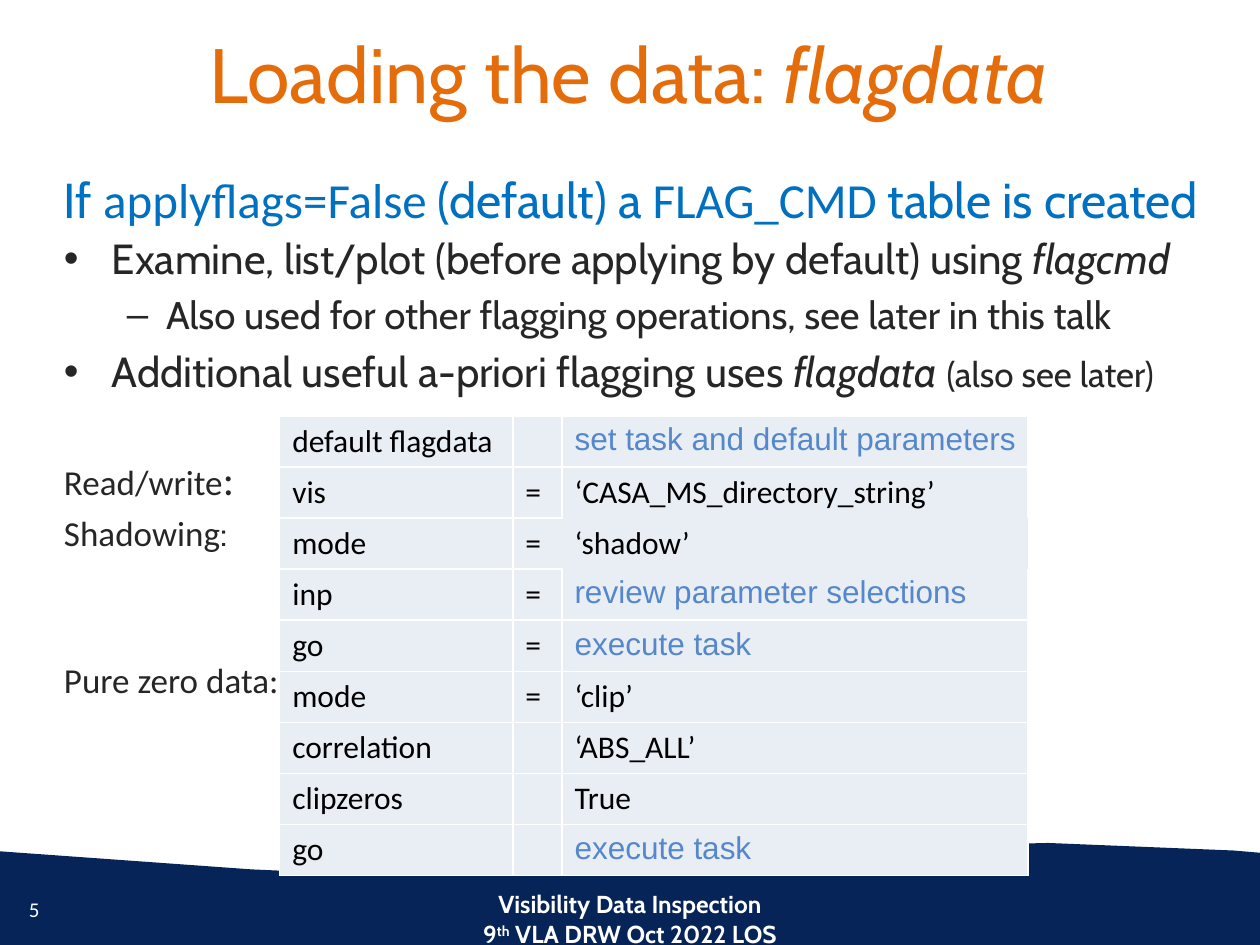
from lxml.etree import SubElement
from pptx import Presentation
from pptx.dml.color import RGBColor as RGB
from pptx.enum.text import MSO_ANCHOR as ANCHOR, PP_ALIGN as ALIGN
from pptx.oxml.ns import qn
from pptx.util import Inches, Pt

HUES = {"navy": "062458", "white": "FFFFFF", "orange": "E46C0A", "blue": "0070C0",
        "dark": "262626", "black": "000000", "note": "5587CB", "cell": "E9EDF4"}


def hue(name):
    return RGB.from_string(HUES[name])


def write(para, runs, ink, **base):
    """Add runs of (text, format changes) to a paragraph."""
    for text, diff in runs:
        run = para.add_run()
        run.text = text
        look = {**base, **diff}
        if "lift" in look:
            run._r.get_or_add_rPr().set("baseline", str(look.pop("lift")))
        for key, val in look.items():
            setattr(run.font, key, val)
        run.font.color.rgb = hue(ink)


prs = Presentation()
prs.slide_width, prs.slide_height = Inches(10), Inches(7.5)
slide = prs.slides.add_slide(prs.slide_layouts[5])
shapes = slide.shapes
ital = {"italic": True}
cal = {"name": "Calibri"}

# Wave along the bottom
wave = [(-0.09, 6.75), (2, 6.9), (3.14, 6.95), (4.08, 6.9), (4.9, 6.85), (6.58, 6.73),
        (8.32, 6.69), (9.79, 6.75), (10.14, 6.78), (10.13, 7.6), (-0.07, 7.58)]
pts = [(Inches(x), Inches(y)) for x, y in wave]
path = shapes.build_freeform(*pts[0])
path.add_line_segments(pts[1:], close=True)
band = path.convert_to_shape()
band.shadow.inherit = False
band.fill.solid()
band.fill.fore_color.rgb = hue("navy")
band.line.fill.background()

# Title
title = shapes.title
title.left, title.top, title.width, title.height = map(Inches, (0.27, 0.16, 9.44, 0.9))
title.text_frame.vertical_anchor = ANCHOR.TOP
head = title.text_frame.paragraphs[0]
head.alignment = ALIGN.CENTER
write(head, [("Loading the data: ", {}), ("flagdata", ital)], "orange",
      name="Cabin", size=Pt(44))

# Text boxes: place, ink, base format, alignment, paragraphs
# Each paragraph: bullet, left indent, hanging indent, space before, runs
small = {**cal, "size": Pt(20)}
boxes = [
    ((0.41, 1.3, 9.44, 0.9), "blue", {"name": "Cabin", "size": Pt(28)}, ALIGN.LEFT, [
        (None, 0, 0, 0, [("If ", {}), ("applyflags=False ", cal), ("(default) a ", {}),
                         ("FLAG_CMD ", cal), ("table is created", {})])]),
    ((0.41, 1.8, 9.44, 4.64), "dark", {"name": "Cabin", "size": Pt(24)}, ALIGN.LEFT, [
        ("•", 0.38, 0.38, 0, [
            ("Examine, list/plot (before applying by default) using ", {}),
            ("flagcmd", ital)]),
        ("–", 0.81, 0.31, 4.4, [
            ("Also used for other flagging operations, see later in this talk",
             {"size": Pt(22)})]),
        ("•", 0.38, 0.38, 4.8, [
            ("Additional useful a-priori flagging uses ", {}), ("flagdata ", ital),
            ("(also see later)", {"size": Pt(20)})]),
        (None, 0, 0, 33, [("Read/write", small), (":", cal)]),
        (None, 0, 0, 4, [("Shadowing", small), (":", {"size": Pt(20)})]),
        (None, 0, 0, 60, [("Pure zero data:", small)])]),
    ((2.99, 7.01, 4.02, 0.42), "white",
     {"name": "Cabin", "size": Pt(14), "bold": True}, ALIGN.CENTER, [
        (None, 0, 0, 0, [("Visibility Data Inspection", {})]),
        (None, 0, 0, 0, [("9", {}), ("th", {"lift": 30000}),
                         (" VLA DRW Oct 2022 LOS", {})])]),
    ((0.13, 7.07, 4.12, 0.34), "white", {**cal, "size": Pt(12)}, ALIGN.LEFT, [
        (None, 0, 0, 0, [("5", {})])]),
]
for place, ink, base, align, paras in boxes:
    frame = shapes.add_textbox(*map(Inches, place)).text_frame
    frame.word_wrap = True
    for i, (mark, left, hang, gap, runs) in enumerate(paras):
        para = frame.add_paragraph() if i else frame.paragraphs[0]
        para.alignment = align
        if gap:
            para.space_before = Pt(gap)
        if mark:
            ppr = para._p.get_or_add_pPr()
            ppr.set("marL", str(Inches(left)))
            ppr.set("indent", str(-Inches(hang)))
            SubElement(ppr, qn("a:buFont"), typeface="Arial")
            SubElement(ppr, qn("a:buChar"), char=mark)
        write(para, runs, ink, **base)

# Table of task parameters; the last field marks a comment
rows = [
    ("default flagdata", "", "set task and default parameters", True),
    ("vis", "=", "‘CASA_MS_directory_string’", False),
    ("mode", "=", "‘shadow’", False),
    ("inp", "=", "review parameter selections", True),
    ("go", "=", "execute task", True),
    ("mode", "=", "‘clip’", False),
    ("correlation", "", "‘ABS_ALL’", False),
    ("clipzeros", "", "True", False),
    ("go", "", "execute task", True),
]
table = shapes.add_table(len(rows), 3, *map(Inches, (2.22, 3.3, 5.94, 3.65))).table
for col, width in zip(table.columns, (1.85, 0.39, 3.7)):
    col.width = Inches(width)
# The ‘shadow’ cell has no borders, nor do its neighbours on that side
bare = {(2, 2, side) for side in "LRTB"} | {(1, 2, "B"), (3, 2, "T"), (2, 1, "R")}
for r, (*texts, note) in enumerate(rows):
    for c, text in enumerate(texts):
        cell = table.cell(r, c)
        # A narrow right margin keeps each entry on one line
        cell.margin_right = Inches(0.02)
        props = cell._tc.get_or_add_tcPr()
        for side in "LRTB":
            line = SubElement(props, qn("a:ln" + side), w=str(Pt(1)))
            if (r, c, side) in bare:
                SubElement(line, qn("a:noFill"))
            else:
                paint = SubElement(line, qn("a:solidFill"))
                SubElement(paint, qn("a:srgbClr"), val=HUES["white"])
        cell.fill.solid()
        cell.fill.fore_color.rgb = hue("cell")
        aside = note and c == 2
        if text:
            write(cell.text_frame.paragraphs[0], [(text, {"bold": False})],
                  "note" if aside else "black",
                  name="Arial" if aside else "Calibri", size=Pt(18))

prs.save("out.pptx")
